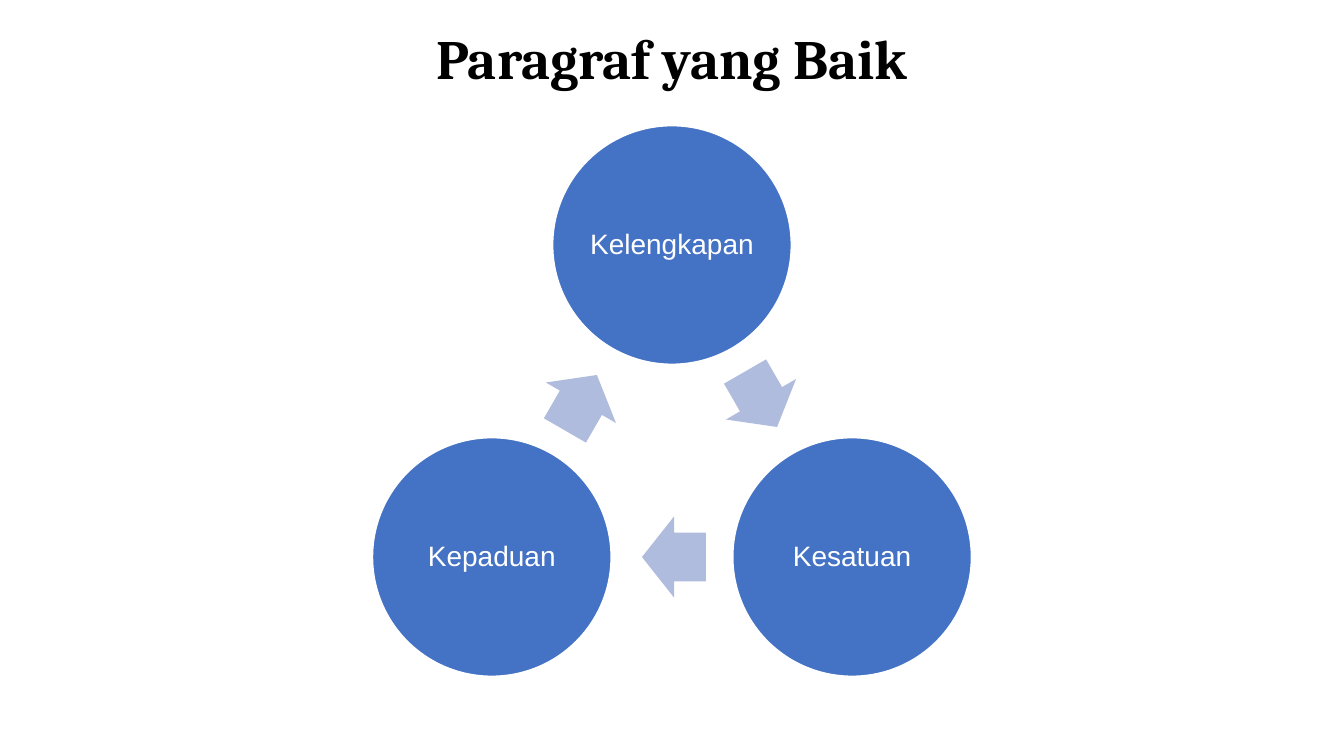
from dataclasses import dataclass
from math import cos, radians, sin

from pptx import Presentation
from pptx.dml.color import RGBColor
from pptx.enum.shapes import MSO_SHAPE
from pptx.enum.text import MSO_ANCHOR, PP_ALIGN
from pptx.util import Pt

OVAL, RIGHT_ARROW = MSO_SHAPE.OVAL, MSO_SHAPE.RIGHT_ARROW
MIDDLE, CENTER = MSO_ANCHOR.MIDDLE, PP_ALIGN.CENTER
EMU_PER_PX = 914400 / 100.8


@dataclass(frozen=True)
class Theme:
    ink: RGBColor = RGBColor(0x00, 0x00, 0x00)
    white: RGBColor = RGBColor(0xFF, 0xFF, 0xFF)
    circle: RGBColor = RGBColor(0x44, 0x72, 0xC4)
    arrow: RGBColor = RGBColor(0xB0, 0xBC, 0xDE)
    heading_font: str = "Cambria"
    body_font: str = "Arial"
    heading_size: float = 39.6
    body_size: float = 20
    outline: float = 2


THEME = Theme()


def px(length):
    return round(length * EMU_PER_PX)


def set_text(frame, text, font, size, color, inset, bold=False):
    frame.word_wrap = True
    frame.vertical_anchor = MIDDLE
    frame.margin_left = frame.margin_right = px(inset[0])
    frame.margin_top = frame.margin_bottom = px(inset[1])
    frame.text = text
    line = frame.paragraphs[0]
    line.alignment = CENTER
    line.line_spacing = 0.9
    style = line.runs[0].font
    style.name, style.size, style.bold = font, Pt(size), bold
    style.color.rgb = color


def centred_shape(slide, kind, center_x, center_y, width, height, fill):
    shape = slide.shapes.add_shape(
        kind, px(center_x - width / 2), px(center_y - height / 2), px(width), px(height))
    shape.shadow.inherit = False
    shape.fill.solid()
    shape.fill.fore_color.rgb = fill
    return shape


def add_heading(slide, box, text):
    heading = slide.shapes.add_textbox(*map(px, box))
    set_text(heading.text_frame, text, THEME.heading_font, THEME.heading_size,
             THEME.ink, (10, 5), bold=True)


def add_cycle(slide, box, qualities):
    left, top, width, _ = box
    diameter, orbit = 240, 208
    arrow_length, arrow_height, arrow_setback = 64, 81, 2
    middle_x, middle_y = left + width / 2, top + diameter / 2 + orbit
    step = 360 / len(qualities)
    arrow_orbit = orbit * cos(radians(step / 2))

    for index, quality in enumerate(qualities):
        # Circle, clockwise from the top
        angle = radians(index * step)
        circle = centred_shape(slide, OVAL, middle_x + orbit * sin(angle),
                               middle_y - orbit * cos(angle),
                               diameter, diameter, THEME.circle)
        circle.line.color.rgb = THEME.white
        circle.line.width = Pt(THEME.outline)
        set_text(circle.text_frame, quality, THEME.body_font, THEME.body_size,
                 THEME.white, (0, 3))

        # Arrow to the next circle, set slightly back from the midpoint
        heading = (index + 0.5) * step
        turn = radians(heading)
        arrow = centred_shape(
            slide, RIGHT_ARROW,
            middle_x + arrow_orbit * sin(turn) - arrow_setback * cos(turn),
            middle_y - arrow_orbit * cos(turn) - arrow_setback * sin(turn),
            arrow_length, arrow_height, THEME.arrow)
        arrow.line.fill.background()
        arrow.adjustments[0], arrow.adjustments[1] = 0.6, 0.5
        arrow.rotation = heading


def main():
    deck = Presentation()
    deck.slide_width, deck.slide_height = px(1344), px(756)
    slide = deck.slides.add_slide(deck.slide_layouts[6])
    add_heading(slide, (27, 27, 1290, 69), "Paragraf yang Baik")
    add_cycle(slide, (372, 125, 600, 552), ["Kelengkapan", "Kesatuan", "Kepaduan"])
    deck.save("out.pptx")


if __name__ == "__main__":
    main()
